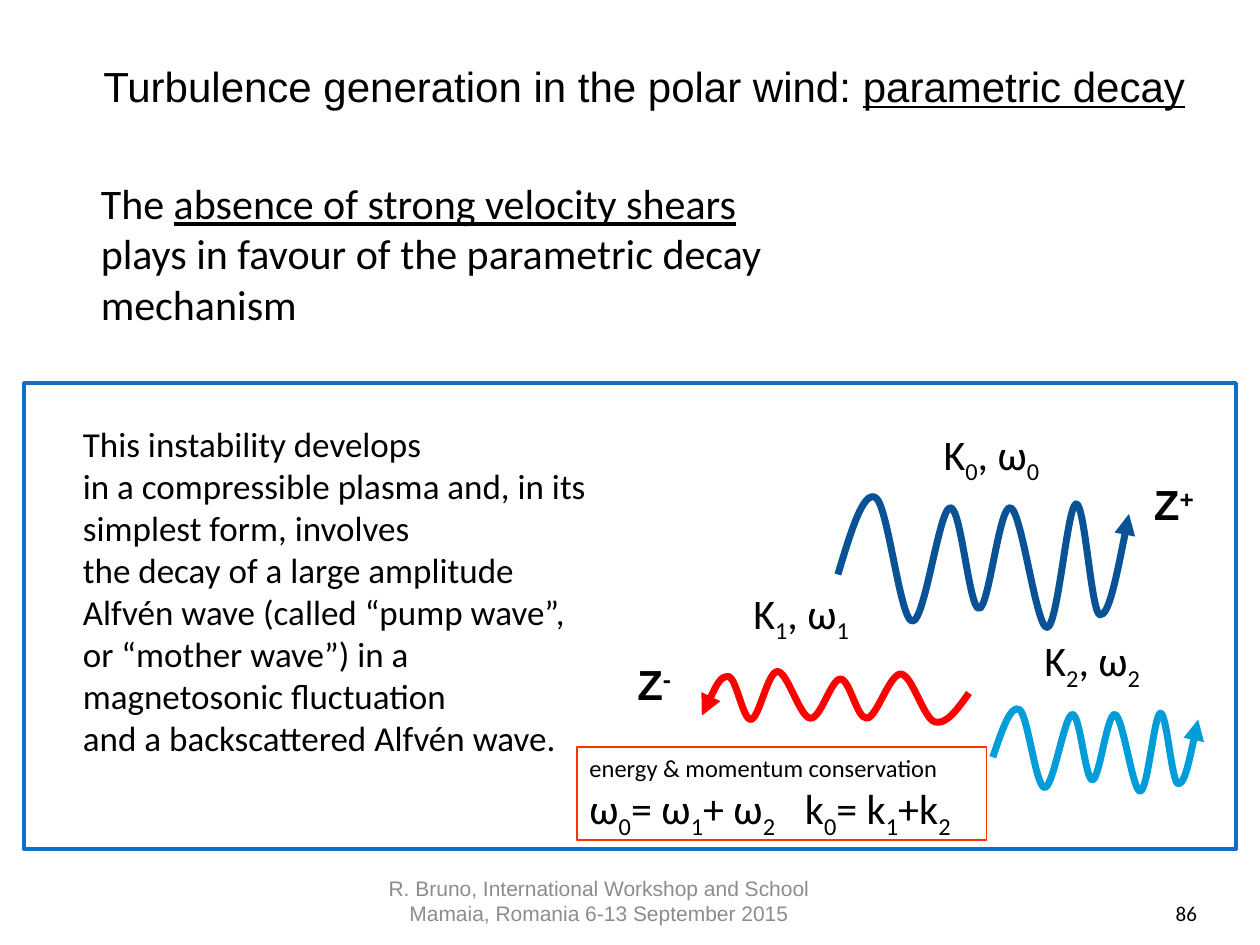
from lxml import etree
from pptx import Presentation
from pptx.dml.color import RGBColor
from pptx.enum.shapes import MSO_SHAPE
from pptx.enum.text import MSO_ANCHOR, PP_ALIGN
from pptx.oxml.ns import qn
from pptx.util import Inches, Pt

RECT = MSO_SHAPE.RECTANGLE
TOP, BOTTOM = MSO_ANCHOR.TOP, MSO_ANCHOR.BOTTOM
LEFT, CENTER, RIGHT = PP_ALIGN.LEFT, PP_ALIGN.CENTER, PP_ALIGN.RIGHT

BLACK = RGBColor(0x00, 0x00, 0x00)
WHITE = RGBColor(0xFF, 0xFF, 0xFF)
GREY = RGBColor(0x8C, 0x8C, 0x8C)
BLUE = RGBColor(0x0F, 0x6F, 0xC6)
NAVY = RGBColor(0x09, 0x52, 0x95)
SKY = RGBColor(0x00, 0x9D, 0xD9)
RED = RGBColor(0xFF, 0x00, 0x00)
ORANGE = RGBColor(0xFF, 0x33, 0x00)

SUB, SUPER = -25, 30
PADS = (0.1, 0.05, 0.1, 0.05)
NO_PADS = (0, 0, 0, 0)

STORY = (
    "This instability develops",
    "in a compressible plasma and, in its simplest form, involves",
    "the decay of a large amplitude Alfvén wave (called “pump wave”, "
    "or “mother wave”) in a magnetosonic fluctuation",
    "and a backscattered Alfvén wave.",
)

PUMP = [(6.65, 4.56), (6.95, 3.95), (7.24, 4.93), (7.54, 4.03), (7.77, 4.83),
        (8.02, 4.03), (8.31, 4.98), (8.54, 4.0), (8.73, 4.88), (8.96, 4.08)]
BACK = [(7.69, 5.5), (7.42, 5.73), (7.15, 5.35), (6.88, 5.7), (6.67, 5.39),
        (6.43, 5.7), (6.17, 5.33), (5.96, 5.71), (5.78, 5.37), (5.57, 5.68)]
SOUND = [(7.88, 6.01), (8.09, 5.63), (8.29, 6.25), (8.51, 5.67), (8.67, 6.19),
         (8.85, 5.67), (9.05, 6.28), (9.21, 5.66), (9.35, 6.22), (9.51, 5.71)]


def put(para, text, size, font="Calibri", color=BLACK, base=0, bold=False,
        under=False):
    """Add one run; base is its shift in percent."""
    run = para.add_run()
    run.text = text
    face = run.font
    face.size, face.name, face.bold = Pt(size), font, bold
    face.color.rgb = color
    if under:
        face.underline = True
    if base:
        run._r.get_or_add_rPr().set("baseline", str(base * 1000))
    return run


def frame(shape, pads=PADS, anchor=TOP, wrap=True):
    """Set up the text frame of a shape and return it."""
    text = shape.text_frame
    text.word_wrap = wrap
    text.vertical_anchor = anchor
    (text.margin_left, text.margin_top,
     text.margin_right, text.margin_bottom) = map(Inches, pads)
    return text


def text_box(slide, box, **setup):
    return frame(slide.shapes.add_textbox(*map(Inches, box)), **setup)


def panel(slide, box, color, width, fill=None):
    shape = slide.shapes.add_shape(RECT, *map(Inches, box))
    shape.shadow.inherit = False
    if fill is None:
        shape.fill.background()
    else:
        shape.fill.solid()
        shape.fill.fore_color.rgb = fill
    shape.line.color.rgb = color
    shape.line.width = Pt(width)
    return shape


def shade(run):
    """Give the letters of a run a soft shadow."""
    effects = etree.Element(qn("a:effectLst"))
    outer = etree.SubElement(effects, qn("a:outerShdw"), blurRad="38100",
                             dist="38100", dir="2700000")
    tint = etree.SubElement(outer, qn("a:srgbClr"), val="000000")
    etree.SubElement(tint, qn("a:alpha"), val="43000")
    run._r.rPr.find(qn("a:solidFill")).addnext(effects)


def handles(nodes):
    """Return control, control, node for each part of a smooth curve."""
    last = len(nodes) - 1
    slope = [tuple((b - a) / 6 for a, b in zip(nodes[max(i - 1, 0)],
                                               nodes[min(i + 1, last)]))
             for i in range(last + 1)]
    points = []
    for i in range(last):
        start, end = nodes[i], nodes[i + 1]
        first = tuple(p + s for p, s in zip(start, slope[i]))
        second = tuple(p - s for p, s in zip(end, slope[i + 1]))
        if i == 0:
            first = tuple((p + q) / 2 for p, q in zip(start, second))
        if i == last - 1:
            second = tuple((p + q) / 2 for p, q in zip(first, end))
        points += [first, second, end]
    return points


def wave(slide, nodes, color):
    """Draw a smooth curve through the nodes, with an arrowhead at its end."""
    start = map(Inches, nodes[0])
    pen = slide.shapes.build_freeform(*start, scale=1.0)
    pen.add_line_segments([tuple(map(Inches, p)) for p in handles(nodes)],
                          close=False)
    shape = pen.convert_to_shape()
    shape.shadow.inherit = False
    shape.fill.background()
    shape.line.color.rgb = color
    shape.line.width = Pt(4)
    etree.SubElement(shape.line._get_or_add_ln(), qn("a:tailEnd"),
                     type="triangle")
    steps = list(shape._element.iter(qn("a:lnTo")))
    for i in range(0, len(steps), 3):
        curve = etree.Element(qn("a:cubicBezTo"))
        steps[i].addprevious(curve)
        for step in steps[i:i + 3]:
            curve.append(step[0])
            step.getparent().remove(step)


def terms(para, pairs):
    """Write symbols, each followed by its subscript."""
    for sign, index in pairs:
        put(para, sign, 24)
        put(para, index, 24, base=SUB)


def wave_tag(slide, left, top, index):
    text = text_box(slide, (left, top, 1.01, 0.51), wrap=False)
    terms(text.paragraphs[0], [("K", index), (", ω", index)])


def field_tag(slide, left, top, width, sign):
    para = text_box(slide, (left, top, width, 0.51), wrap=False).paragraphs[0]
    put(para, "Z", 24, "Arial", bold=True)
    put(para, sign, 24, "Arial", bold=True, base=SUPER)


def law(slide):
    """Draw the box with the conservation laws."""
    text = frame(panel(slide, (4.58, 5.93, 3.25, 0.74), ORANGE, 1))
    head, sums = text.paragraphs[0], text.add_paragraph()
    head.alignment = sums.alignment = LEFT
    put(head, "energy & momentum conservation", 14)
    tabs = etree.SubElement(sums._p.get_or_add_pPr(), qn("a:tabLst"))
    etree.SubElement(tabs, qn("a:tab"), pos=str(Inches(1.71)), algn="l")
    terms(sums, [("ω", "0"), ("= ω", "1"), ("+ ω", "2"),
                 ("\tk", "0"), ("= k", "1"), ("+k", "2")])


def heads(slide):
    title = text_box(slide, (0.82, 0.43, 8.93, 0.45), pads=(0, 0.05, 0, 0),
                     anchor=BOTTOM).paragraphs[0]
    put(title, "Turbulence generation in the polar wind: ", 24, "Arial")
    put(title, "parametric decay", 24, "Arial", under=True)
    claim = text_box(slide, (0.26, 1.36, 6.12, 1.31),
                     pads=(0.54, 0.05, 0.1, 0.05)).paragraphs[0]
    shade(put(claim, "The ", 24))
    shade(put(claim, "absence of strong velocity shears ", 24, under=True))
    shade(put(claim, "plays in favour of the parametric decay mechanism", 24))


def story(slide):
    text = text_box(slide, (0.56, 3.3, 4.24, 2.79))
    for i, line in enumerate(STORY):
        put(text.add_paragraph() if i else text.paragraphs[0], line, 20)


def footer(slide):
    page = text_box(slide, (8.67, 6.95, 0.83, 0.4), pads=NO_PADS,
                    anchor=BOTTOM).paragraphs[0]
    page.alignment = RIGHT
    put(page, "86", 12)
    event = text_box(slide, (2.92, 6.95, 3.67, 0.4), pads=NO_PADS,
                     anchor=BOTTOM).paragraphs[0]
    event.alignment = CENTER
    put(event, "R. Bruno, International Workshop and School", 12, "Arial", GREY)
    event.add_line_break()
    put(event, "Mamaia, Romania 6-13 September 2015", 12, "Arial", GREY)


def main():
    deck = Presentation()
    deck.slide_width, deck.slide_height = Inches(10), Inches(7.5)
    slide = deck.slides.add_slide(deck.slide_layouts[6])
    panel(slide, (0.19, 3.04, 9.62, 3.7), BLUE, 2, WHITE)
    heads(slide)
    story(slide)
    for nodes, color in ((PUMP, NAVY), (BACK, RED), (SOUND, SKY)):
        wave(slide, nodes, color)
    for left, top, index in ((7.39, 3.35, "0"), (5.88, 4.61, "1"),
                             (8.19, 4.99, "2")):
        wave_tag(slide, left, top, index)
    law(slide)
    field_tag(slide, 9.06, 3.75, 0.54, "+")
    field_tag(slide, 4.96, 5.18, 0.48, "-")
    footer(slide)
    deck.save("out.pptx")


if __name__ == "__main__":
    main()
